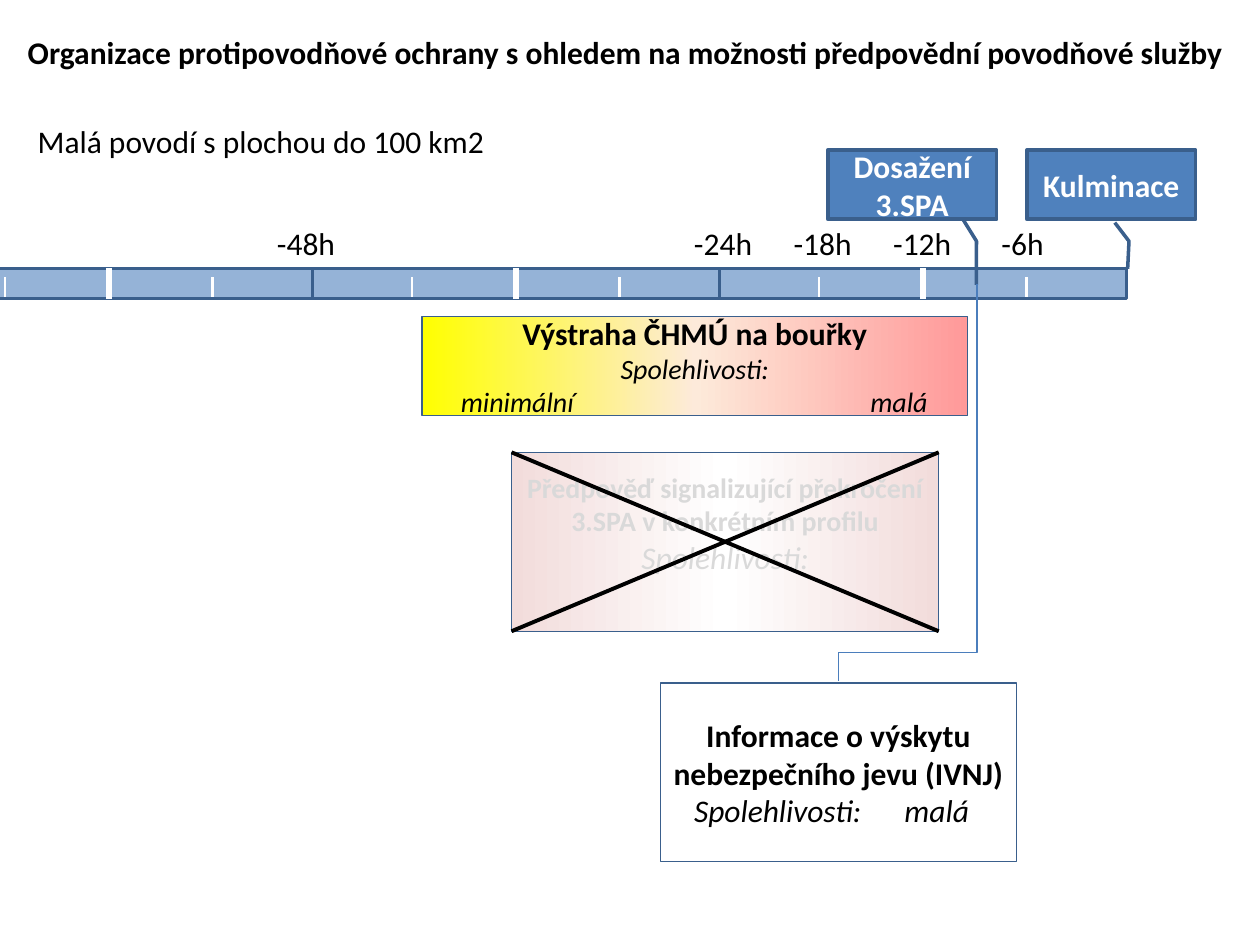
from lxml.etree import SubElement
from pptx import Presentation
from pptx.dml.color import RGBColor
from pptx.enum.shapes import MSO_CONNECTOR, MSO_SHAPE
from pptx.enum.text import MSO_ANCHOR, MSO_AUTO_SIZE, PP_ALIGN
from pptx.oxml.ns import qn
from pptx.util import Inches, Pt

FONT = "Calibri"
WHITE = RGBColor(0xFF, 0xFF, 0xFF)
BLACK = RGBColor(0x00, 0x00, 0x00)
GREY = RGBColor(0xD9, 0xD9, 0xD9)
BLUE = RGBColor(0x4F, 0x81, 0xBD)
NAVY = RGBColor(0x3A, 0x5F, 0x8C)
SKY = RGBColor(0x95, 0xB3, 0xD7)
LINK = RGBColor(0x4B, 0x7E, 0xBC)
RED = RGBColor(0xFF, 0x99, 0x99)
CREAM = RGBColor(0xFD, 0xEA, 0xDA)
YELLOW = RGBColor(0xFF, 0xFF, 0x00)
PINK = RGBColor(0xF2, 0xDC, 0xDB)
COLS, ROWS = 100, 75
DAY = 32.3
BAR_TOP, BAR_HIGH = 21.3, 2.4


def grid(*cells):
    """Turn grid cells of a tenth of an inch into lengths."""
    return [Inches(cell / 10) for cell in cells]


def add_run(para, text, size=18, color=BLACK, bold=False, slant=False):
    """Add one formatted run to a paragraph."""
    run = para.add_run()
    run.text = text
    font = run.font
    font.name, font.size, font.bold, font.italic = FONT, Pt(size), bold, slant
    font.color.rgb = color


def add_tabs(para, stops):
    """Set left tab stops, in grid columns, on a paragraph."""
    tabs = SubElement(para._p.get_or_add_pPr(), qn("a:tabLst"))
    for stop in grid(*stops):
        SubElement(tabs, qn("a:tab"), pos=str(stop), algn="l")


def add_line(shapes, ends, color, width, kind=MSO_CONNECTOR.STRAIGHT):
    """Draw a line without shadow between two grid points."""
    line = shapes.add_connector(kind, *grid(*ends))
    line.line.color.rgb = color
    line.line.width = Pt(width)
    SubElement(line._element.spPr, qn("a:effectLst"))
    return line


def add_box(shapes, area, fill, width, kind=MSO_SHAPE.RECTANGLE):
    """Draw a framed shape filled with one colour or a three-stop blend."""
    box = shapes.add_shape(kind, *grid(*area))
    box.shadow.inherit = False
    box.line.color.rgb = NAVY
    box.line.width = Pt(width)
    if isinstance(fill, RGBColor):
        box.fill.solid()
        box.fill.fore_color.rgb = fill
    else:
        blend(box, fill)
    return box


def blend(box, colors):
    """Fill a shape with evenly spaced colours, from right to left."""
    box.fill.gradient()
    box.fill.gradient_angle = 180
    stops = box._element.spPr.find(".//" + qn("a:gsLst"))
    for stop in list(stops):
        stops.remove(stop)
    for step, color in enumerate(colors):
        share = 100000 * step // (len(colors) - 1)
        stop = SubElement(stops, qn("a:gs"), pos=str(share))
        SubElement(stop, qn("a:srgbClr"), val=str(color))


def fill_text(box, rows):
    """Write one paragraph per row, centred or set on tab stops."""
    frame = box.text_frame
    frame.word_wrap = True
    frame.vertical_anchor = MSO_ANCHOR.MIDDLE
    for index, (text, style, stops) in enumerate(rows):
        para = frame.add_paragraph() if index else frame.paragraphs[0]
        para.alignment = PP_ALIGN.LEFT if stops else PP_ALIGN.CENTER
        if stops:
            add_tabs(para, stops)
        add_run(para, text, **style)


def add_label(shapes, left, top, width, text):
    """Add a one-line label."""
    box = shapes.add_textbox(*grid(left, top, width, 4))
    box.text_frame.word_wrap = False
    add_run(box.text_frame.paragraphs[0], text)


def add_title(slide, text):
    """Place the slide title along the top edge."""
    title = slide.shapes.title
    title.left, title.top, title.width, title.height = grid(1.2, 2.1, 97.5, 4)
    frame = title.text_frame
    frame.word_wrap = False
    frame.auto_size = MSO_AUTO_SIZE.NONE
    frame.vertical_anchor = MSO_ANCHOR.TOP
    para = frame.paragraphs[0]
    para.alignment = PP_ALIGN.LEFT
    add_run(para, text, bold=True)


def add_day(slide, left):
    """Draw one day of the time axis with its six-hour ticks."""
    shapes = slide.shapes.add_group_shape().shapes
    add_box(shapes, (left, BAR_TOP, DAY, BAR_HIGH), SKY, 2)
    for share, start, end, width in (
        (0.5, 0, BAR_HIGH, 3), (0.755, 0.7, 2.3, 1.5), (0.245, 0.7, 2.3, 1.25),
    ):
        x = left + share * DAY
        add_line(shapes, (x, BAR_TOP + start, x, BAR_TOP + end), WHITE, width)


def add_callout(shapes, left, text, bends):
    """Draw a callout whose leader points at the time axis."""
    box = add_box(shapes, (left, 11.9, 13.4, 5.5), BLUE, 2, MSO_SHAPE.LINE_CALLOUT_2)
    for index, bend in enumerate(bends):
        box.adjustments[index] = bend
    fill_text(box, [(text, dict(color=WHITE, bold=True), None)])


def add_link(shapes):
    """Join the information box to the time axis with an elbow."""
    link = add_line(shapes, (87.8, 43.8, 56.3, 32.8), LINK, 0.75, MSO_CONNECTOR.ELBOW)
    props = link._element.spPr
    props.find(qn("a:xfrm")).set("rot", "5400000")
    geom = props.find(qn("a:prstGeom"))
    guides = geom.find(qn("a:avLst"))
    if guides is None:
        guides = SubElement(geom, qn("a:avLst"))
    SubElement(guides, qn("a:gd"), name="adj1", fmla="val 7200")


def main():
    """Build the slide and save it."""
    deck = Presentation()
    deck.slide_width, deck.slide_height = grid(COLS, ROWS)
    slide = deck.slides.add_slide(deck.slide_layouts[5])
    shapes = slide.shapes
    add_title(slide, "Organizace protipovodňové ochrany s ohledem na možnosti "
                     "předpovědní povodňové služby")
    for day in (1, 2, 0):
        add_day(slide, -7.5 + day * DAY)
    add_callout(shapes, 81.5, "Kulminace", (1.049, 0.521, 1.317, 0.605, 1.715, 0.597))
    add_callout(shapes, 65.7, "Dosažení 3.SPA", (1.014, 0.804, 1.317, 0.881, 1.947, 0.88))
    for hour, left in ((12, 69.9), (6, 78.5), (18, 62), (24, 54.1), (48, 21)):
        add_label(shapes, left, 17.3, 6.7 if hour > 6 else 5.4, f"-{hour}h")

    slant = dict(size=16, slant=True)
    storm = add_box(shapes, (33.5, 25.1, 43.3, 7.9), (RED, CREAM, YELLOW), 0.75)
    fill_text(storm, [
        ("Výstraha ČHMÚ na bouřky", dict(bold=True), None),
        ("Spolehlivosti:", slant, None),
        ("\tminimální\tmalá", slant, (2.1, 34.6)),
    ])
    left, top, width, height = area = 40.6, 35.9, 33.9, 14.2
    model = add_box(shapes, area, (PINK, WHITE, PINK), 0.75)
    model.text_frame.margin_bottom = Inches(0.35)
    fill_text(model, [
        ("Předpověď signalizující překročení 3.SPA v konkrétním profilu",
         dict(size=16, color=GREY, bold=True), None),
        ("Spolehlivosti:", dict(color=GREY, slant=True), None),
    ])
    notice = add_box(shapes, (52.4, 54.2, 28.3, 14.2), WHITE, 0.75)
    fill_text(notice, [
        ("Informace o výskytu nebezpečního jevu (IVNJ)", dict(bold=True), None),
        ("\tSpolehlivosti:\tmalá", dict(slant=True), (1.7, 18.4)),
    ])
    add_link(shapes)
    add_label(shapes, 2, 9.2, 37.9, "Malá povodí s plochou do 100 km2")
    right, base = left + width, top + height
    for start, end in ((top, base), (base, top)):
        add_line(shapes, (left, start, right, end), BLACK, 2.25)
    deck.save("out.pptx")


if __name__ == "__main__":
    main()
